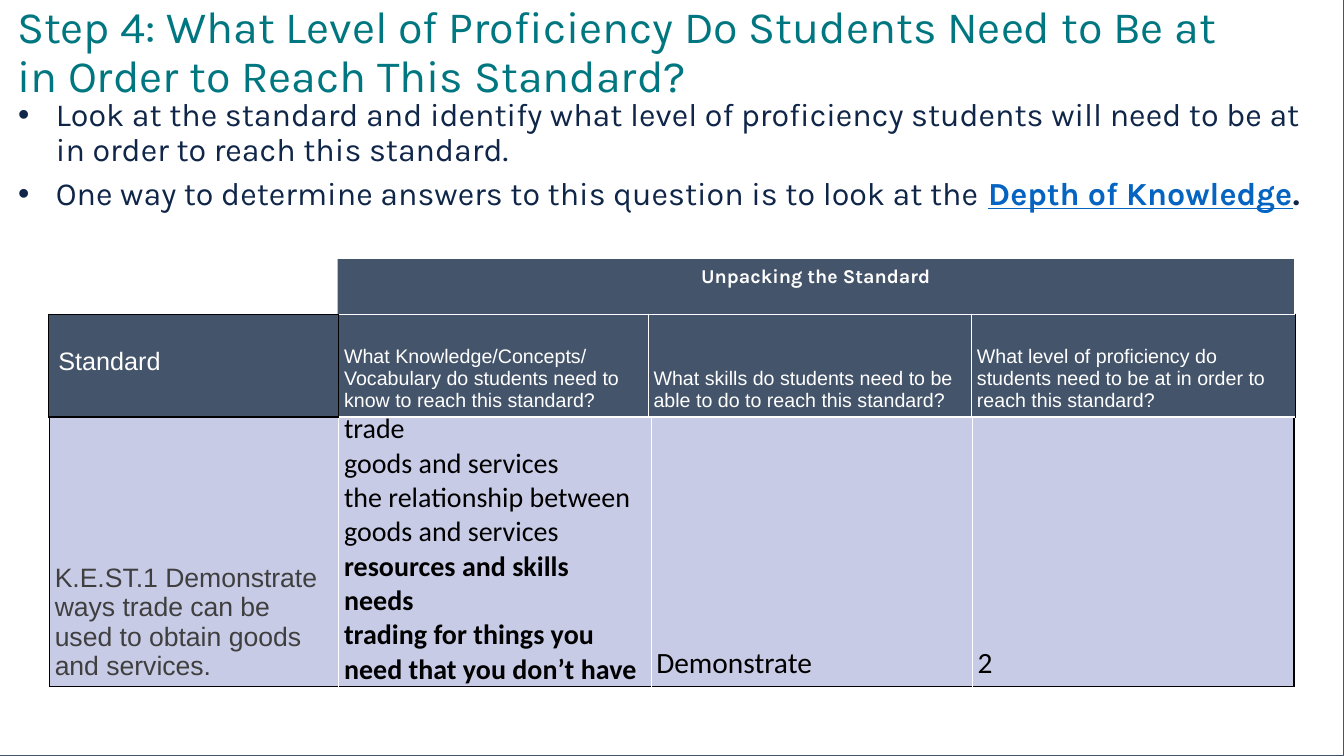
from lxml import etree
from pptx import Presentation
from pptx.dml.color import RGBColor
from pptx.enum.shapes import MSO_SHAPE
from pptx.enum.text import MSO_ANCHOR, PP_ALIGN
from pptx.oxml.ns import qn
from pptx.util import Cm, Pt

RECTANGLE = MSO_SHAPE.RECTANGLE
TOP, BOTTOM = MSO_ANCHOR.TOP, MSO_ANCHOR.BOTTOM
LEFT, CENTER = PP_ALIGN.LEFT, PP_ALIGN.CENTER

WHITE = RGBColor(0xFF, 0xFF, 0xFF)
BLACK = RGBColor(0x00, 0x00, 0x00)
TEAL = RGBColor(0x00, 0x77, 0x80)
NAVY = RGBColor(0x10, 0x26, 0x49)
LINK_BLUE = RGBColor(0x05, 0x63, 0xC1)
SLATE = RGBColor(0x44, 0x54, 0x6A)
LAVENDER = RGBColor(0xC8, 0xCB, 0xE6)
GRAY = RGBColor(0x3F, 0x3F, 0x3F)

CELL_MARGIN = Cm(0.13)


def add_run(paragraph, text, font, size, color, bold=False, underline=False):
    run = paragraph.add_run()
    run.text = text
    run.font.name = font
    run.font.size = Pt(size)
    run.font.color.rgb = color
    run.font.bold = bold
    run.font.underline = underline


def paragraph_at(frame, index):
    return frame.paragraphs[0] if index == 0 else frame.add_paragraph()


def add_rectangle(slide, left, top, width, height, fill, line=None):
    rectangle = slide.shapes.add_shape(
        RECTANGLE, Cm(left), Cm(top), Cm(width), Cm(height))
    rectangle.shadow.inherit = False
    rectangle.fill.solid()
    rectangle.fill.fore_color.rgb = fill
    if line is None:
        rectangle.line.fill.background()
    else:
        rectangle.line.color.rgb = line
        rectangle.line.width = Pt(0.75)
    return rectangle


def add_text_frame(slide, left, top, width, height):
    frame = slide.shapes.add_textbox(
        Cm(left), Cm(top), Cm(width), Cm(height)).text_frame
    frame.word_wrap = True
    return frame


def add_bullet(paragraph):
    properties = paragraph._p.get_or_add_pPr()
    properties.set("marL", str(Cm(0.95)))
    properties.set("indent", str(-Cm(0.95)))
    bullet_color = etree.SubElement(properties, qn("a:buClr"))
    etree.SubElement(bullet_color, qn("a:srgbClr"), val=str(NAVY))
    etree.SubElement(properties, qn("a:buFont"), typeface="Arial")
    etree.SubElement(properties, qn("a:buChar"), char="•")


def add_bullets(slide, bullets):
    frame = add_text_frame(slide, 0.46, 2.49, 32.97, 12.09)
    frame.margin_left = frame.margin_right = 0
    frame.margin_top = frame.margin_bottom = 0
    for index, runs in enumerate(bullets):
        paragraph = paragraph_at(frame, index)
        add_bullet(paragraph)
        paragraph.line_spacing = 0.9
        if index:
            paragraph.space_before = Pt(7)
        for text, color, bold, underline in runs:
            add_run(paragraph, text, "Karla", 23, color, bold, underline)


def set_borders(cell, left, right, top, bottom):
    properties = cell._tc.get_or_add_tcPr()
    sides = zip(("a:lnL", "a:lnR", "a:lnT", "a:lnB"), (left, right, top, bottom))
    for tag, color in sides:
        border = etree.SubElement(properties, qn(tag), w=str(Pt(1)))
        solid = etree.SubElement(border, qn("a:solidFill"))
        etree.SubElement(solid, qn("a:srgbClr"), val=str(color))


def add_row_table(slide, left, top, widths, height, fill, cells, borders):
    """Each cell is (font, size, color, [(text, bold), ...])."""
    table = slide.shapes.add_table(
        1, len(widths), Cm(left), Cm(top), Cm(sum(widths)), Cm(height)).table
    table.first_row = table.horz_banding = False
    table.rows[0].height = Cm(height)
    for index, (font, size, color, lines) in enumerate(cells):
        table.columns[index].width = Cm(widths[index])
        cell = table.cell(0, index)
        set_borders(cell, *borders[index])
        cell.fill.solid()
        cell.fill.fore_color.rgb = fill
        cell.vertical_anchor = BOTTOM
        cell.margin_left = cell.margin_right = CELL_MARGIN
        cell.margin_top = cell.margin_bottom = CELL_MARGIN
        for line, (text, bold) in enumerate(lines):
            add_run(paragraph_at(cell.text_frame, line), text, font, size, color, bold)
    return table


def main():
    prs = Presentation()
    prs.slide_width, prs.slide_height = Cm(33.87), Cm(19.05)
    slide = prs.slides.add_slide(prs.slide_layouts[6])

    # Slide frame
    add_rectangle(slide, 0, 0, 33.87, 19.05, WHITE, SLATE)

    # Title
    title = add_text_frame(slide, 0.18, 0, 31.6, 3.66).paragraphs[0]
    title.line_spacing = 0.9
    add_run(title, "Step 4: What Level of Proficiency Do Students Need to Be at "
            "in Order to Reach This Standard?", "Karla", 32, TEAL)

    # Guidance bullets
    add_bullets(slide, [
        [("Look at the standard and identify what level of proficiency students "
          "will need to be at in order to reach this standard.", NAVY, False, False)],
        [("One way to determine answers to this question is to look at the ",
          NAVY, False, False),
         ("Depth of Knowledge", LINK_BLUE, True, True),
         (".", NAVY, True, False)],
    ])

    # Standard and its answers
    concepts = [
        ("trade", False),
        ("goods and services", False),
        ("the relationship between goods and services", False),
        ("resources and skills", True),
        ("needs", True),
        ("trading for things you need that you don’t have", True),
    ]
    answers = [
        ("Arial", 19, GRAY, [("K.E.ST.1 Demonstrate ways trade can be used to "
                              "obtain goods and services.", False)]),
        ("Calibri", 20, BLACK, concepts),
        ("Calibri", 21, BLACK, [("Demonstrate", False)]),
        ("Calibri", 21, BLACK, [("2", False)]),
    ]
    inner = (WHITE, WHITE, WHITE, BLACK)
    add_row_table(slide, 1.25, 10.26, (7.29, 7.87, 8.1, 8.1), 7.04, LAVENDER, answers,
                  [(BLACK, WHITE, WHITE, BLACK), inner, inner,
                   (WHITE, BLACK, WHITE, BLACK)])

    # Banner over the questions
    banner = add_rectangle(slide, 8.51, 6.53, 24.1, 1.45, SLATE).text_frame
    banner.word_wrap = True
    banner.vertical_anchor = TOP
    banner.paragraphs[0].alignment = CENTER
    add_run(banner.paragraphs[0], "Unpacking the Standard", "Karla", 14, WHITE, True)

    # Question headings
    questions = [
        "What Knowledge/Concepts/ Vocabulary do students need to know to reach "
        "this standard?",
        "What skills do students need to be able to do to reach this standard?",
        "What level of proficiency do students need to be at in order to reach "
        "this standard?",
    ]
    headings = [("Arial", 18, WHITE, [("Standard", False)])]
    headings += [("Arial", 14, WHITE, [(question, False)]) for question in questions]
    header = add_row_table(slide, 1.22, 7.92, (7.32, 7.8, 8.15, 8.15), 2.59, SLATE,
                           headings,
                           [(BLACK,) * 4, (BLACK, WHITE, WHITE, WHITE), (WHITE,) * 4,
                            (WHITE, BLACK, WHITE, WHITE)])
    standard = header.cell(0, 0)
    standard.vertical_anchor = TOP
    standard.margin_left = Cm(0.25)
    standard.margin_top = Cm(0.85)
    standard.text_frame.paragraphs[0].alignment = LEFT

    prs.save("out.pptx")


if __name__ == "__main__":
    main()
